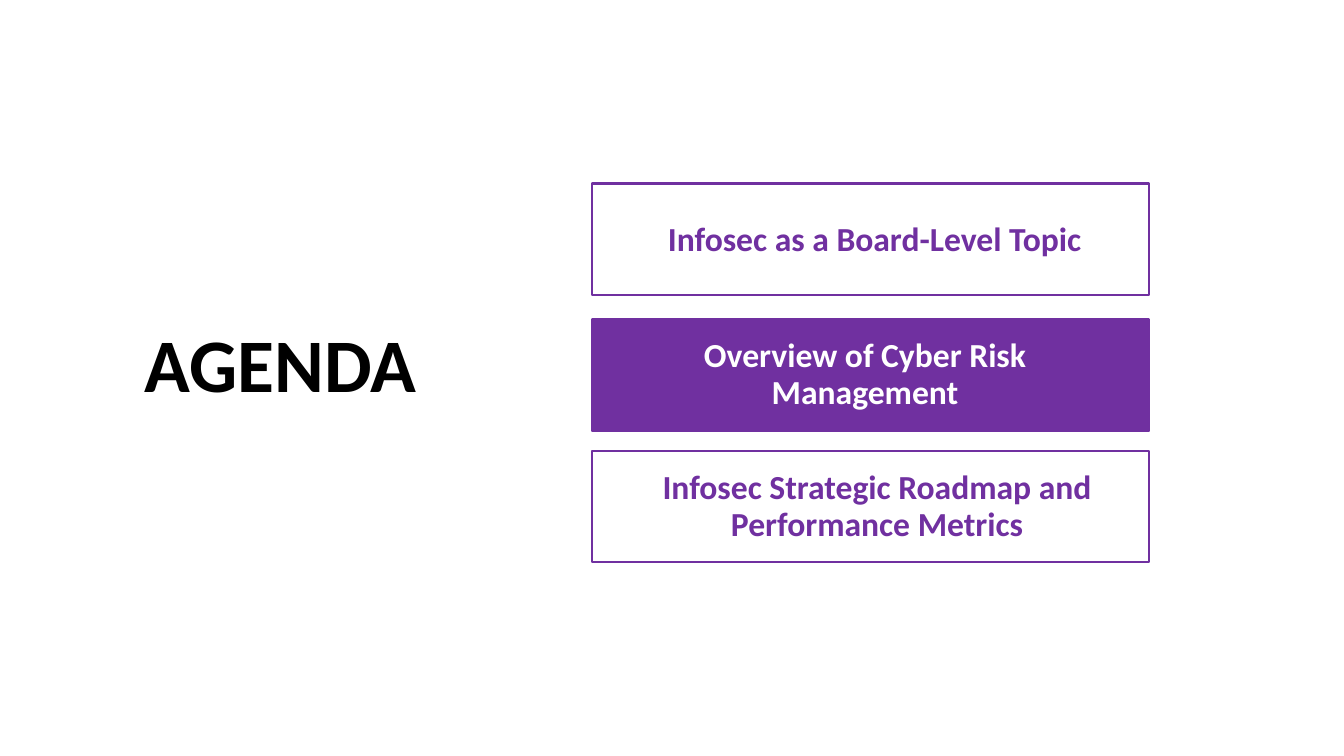
from pptx import Presentation
from pptx.dml.color import RGBColor
from pptx.enum.shapes import MSO_SHAPE
from pptx.enum.text import MSO_ANCHOR, PP_ALIGN
from pptx.util import Inches, Pt

PURPLE = RGBColor(0x70, 0x30, 0xA0)
WHITE = RGBColor(0xFF, 0xFF, 0xFF)
BLACK = RGBColor(0x00, 0x00, 0x00)

# Content: box top, box fill, text colour, label, label area (left, top, width, height)
TITLE = "AGENDA"
TITLE_AREA = (1.16, 2.93, 3.24, 1.45)
TOPICS = [
    (1.82, WHITE, PURPLE, "Infosec as a Board-Level Topic", (6.04, 2.09, 5.15, 0.59)),
    (3.17, PURPLE, WHITE, "Overview of Cyber Risk Management", (6.04, 3.26, 4.96, 0.92)),
    (4.47, WHITE, PURPLE, "Infosec Strategic Roadmap and Performance Metrics",
     (6.16, 4.57, 4.96, 0.92)),
]
BOX_LEFT, BOX_WIDTH, BOX_HEIGHT = 5.87, 5.53, 1.11


def add_text(slide, text, area, *, size, color, indent=0, space_before=0):
    shape = slide.shapes.add_textbox(*map(Inches, area))
    frame = shape.text_frame
    frame.word_wrap = True
    frame.vertical_anchor = MSO_ANCHOR.MIDDLE
    paragraph = frame.paragraphs[0]
    paragraph.alignment = PP_ALIGN.CENTER
    paragraph.line_spacing = 0.9
    paragraph.space_before = Pt(space_before)
    properties = paragraph._p.get_or_add_pPr()
    properties.set("marL", str(Inches(indent)))
    properties.set("indent", "0")
    run = paragraph.add_run()
    run.text = text
    run.font.name = "Calibri"
    run.font.size = Pt(size)
    run.font.bold = True
    run.font.color.rgb = color


def add_box(slide, top, fill):
    shape = slide.shapes.add_shape(
        MSO_SHAPE.RECTANGLE, Inches(BOX_LEFT), Inches(top),
        Inches(BOX_WIDTH), Inches(BOX_HEIGHT))
    shape.shadow.inherit = False
    shape.fill.solid()
    shape.fill.fore_color.rgb = fill
    shape.line.color.rgb = PURPLE
    shape.line.width = Pt(1.5)


def main():
    presentation = Presentation()
    presentation.slide_width = Inches(13.33)
    presentation.slide_height = Inches(7.5)
    slide = presentation.slides.add_slide(presentation.slide_layouts[6])

    # Heading
    add_text(slide, TITLE, TITLE_AREA, size=54, color=BLACK)

    # Topic boxes with their labels
    for top, fill, color, label, area in TOPICS:
        add_box(slide, top, fill)
        add_text(slide, label, area, size=24, color=color, indent=0.12, space_before=10)

    presentation.save("out.pptx")


if __name__ == "__main__":
    main()
